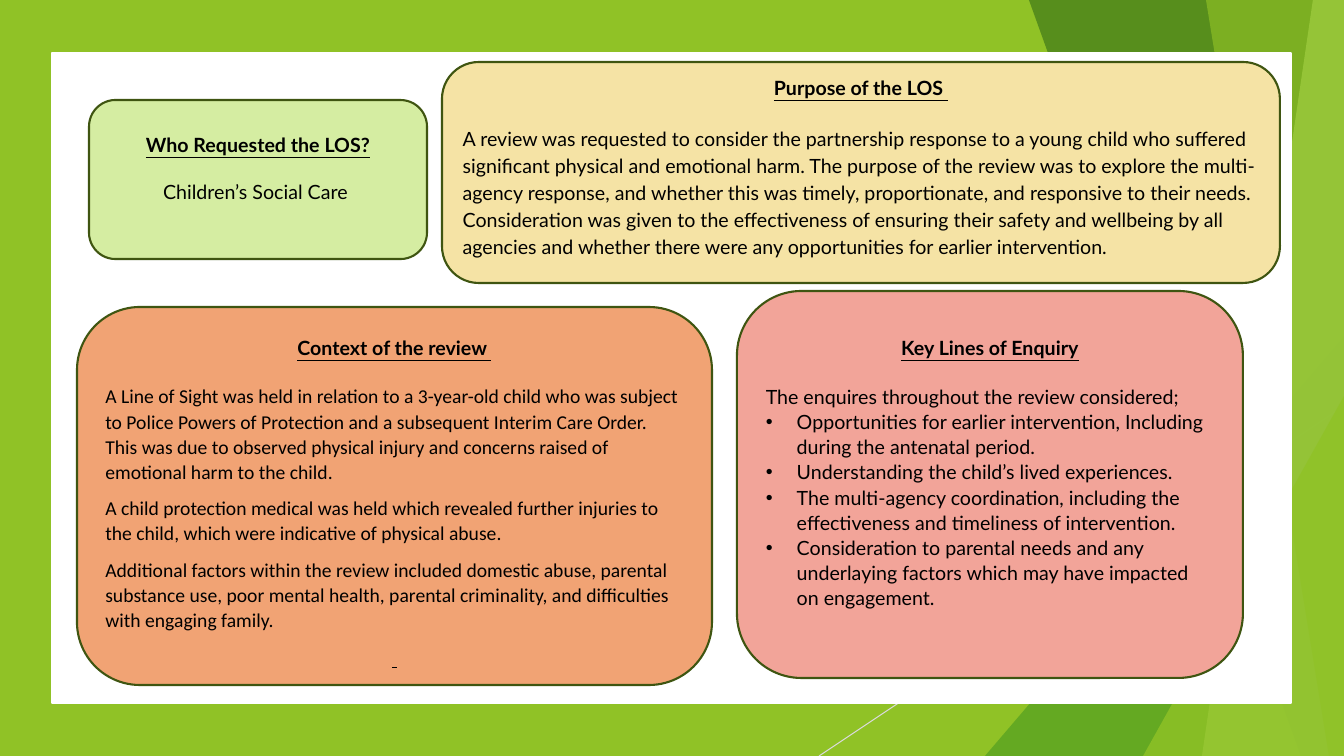
from dataclasses import dataclass

from lxml import etree
from pptx import Presentation
from pptx.dml.color import RGBColor
from pptx.enum.shapes import MSO_CONNECTOR, MSO_SHAPE
from pptx.enum.text import MSO_ANCHOR, PP_ALIGN
from pptx.oxml.ns import qn
from pptx.util import Emu, Pt

RECT, ROUND, TRIANGLE = MSO_SHAPE.RECTANGLE, MSO_SHAPE.ROUNDED_RECTANGLE, MSO_SHAPE.ISOSCELES_TRIANGLE
STRAIGHT = MSO_CONNECTOR.STRAIGHT
LEFT, CENTER = PP_ALIGN.LEFT, PP_ALIGN.CENTER
TOP = MSO_ANCHOR.TOP

WIDTH, HEIGHT = 1344, 756
SCALE = 12192000 / WIDTH  # EMU per px

LIME = RGBColor(0x90, 0xC2, 0x26)
GREEN = RGBColor(0x54, 0xA0, 0x21)
DARK_GREEN = RGBColor(0x3F, 0x78, 0x19)
PALE_LIME = RGBColor(0xC0, 0xE4, 0x74)
OLIVE = RGBColor(0x3F, 0x55, 0x11)
GREY = RGBColor(0xD9, 0xD9, 0xD9)
WHITE = RGBColor(0xFF, 0xFF, 0xFF)
BLACK = RGBColor(0, 0, 0)
MINT = RGBColor(0xD5, 0xED, 0xA2)
SAND = RGBColor(0xF5, 0xE3, 0xA5)
ORANGE = RGBColor(0xF1, 0xA3, 0x74)
PINK = RGBColor(0xF2, 0xA4, 0x99)


@dataclass
class Facet:
    """Band from a slanted left edge to the right side of the slide."""
    top_x: int
    bottom_x: int
    color: RGBColor
    alpha: int


@dataclass
class Wedge:
    """Right triangle in the bottom right corner of the slide."""
    left: int
    top: int
    color: RGBColor
    alpha: int


@dataclass
class Card:
    box: tuple[int, int, int, int]
    color: RGBColor
    inset_top: int
    title: str
    body: list[str]
    bullets: tuple[str, ...] = ()
    font: str = "Lato"
    align: PP_ALIGN = LEFT
    spacing: float = 1.07
    after: int = 0
    closing: str = ""


DECOR = [
    Facet(1238, 1012, LIME, 30),
    Facet(1058, 1192, LIME, 20),
    Wedge(985, 336, GREEN, 72),
    Facet(1029, 1301, DARK_GREEN, 70),
    Facet(1313, 1202, PALE_LIME, 70),
    Facet(1206, 1329, LIME, 65),
    Wedge(1143, 396, LIME, 80),
]

CARDS = [
    Card((89, 100, 338, 159), MINT, 25, "Who Requested the LOS?",
         ["Children’s Social Care "], align=CENTER, spacing=1.0),
    Card((442, 62, 838, 221), SAND, 3, "Purpose of the LOS ",
         ["A review was requested to consider the partnership response to a young child who "
          "suffered significant physical and emotional harm. The purpose of the review was to "
          "explore the multi-agency response, and whether this was timely, proportionate, and "
          "responsive to their needs. Consideration was given to the effectiveness of ensuring "
          "their safety and wellbeing by all agencies and whether there were any opportunities "
          "for earlier intervention."], spacing=1.15),
    Card((77, 307, 635, 378), ORANGE, 10, "Context of the review ",
         ["A Line of Sight was held in relation to a 3-year-old child who was subject to Police "
          "Powers of Protection and a subsequent Interim Care Order. This was due to observed "
          "physical injury and concerns raised of emotional harm to the child.",
          "A child protection medical was held which revealed further injuries to the child, "
          "which were indicative of physical abuse.",
          "Additional factors within the review included domestic abuse, parental substance use, "
          "poor mental health, parental criminality, and difficulties with engaging family."],
         font="Calibri", after=8, closing=" "),
    Card((737, 291, 506, 387), PINK, 26, "Key Lines of Enquiry",
         ["The enquires throughout the review considered;"],
         bullets=(
             "Opportunities for earlier intervention, Including during the antenatal period.",
             "Understanding the child’s lived experiences.",
             "The multi-agency coordination, including the effectiveness and timeliness of "
             "intervention.",
             "Consideration to parental needs and any underlaying factors which may have "
             "impacted on engagement.")),
]


def px(n: int) -> Emu:
    return Emu(round(n * SCALE))


def style(s, color: RGBColor, alpha: int = 100, line: RGBColor | None = None,
          weight: float = 1.5) -> None:
    s.shadow.inherit = False
    s.fill.solid()
    s.fill.fore_color.rgb = color
    if alpha < 100:
        clr = s._element.spPr.find(qn("a:solidFill"))[0]
        etree.SubElement(clr, qn("a:alpha"), val=str(alpha * 1000))
    if line is None:
        s.line.fill.background()
    else:
        s.line.color.rgb = line
        s.line.width = Pt(weight)


def add_box(shapes, kind, box: tuple[int, int, int, int], color: RGBColor, **fmt):
    s = shapes.add_shape(kind, *map(px, box))
    style(s, color, **fmt)
    return s


def add_decor(shapes, part: Facet | Wedge) -> None:
    if isinstance(part, Wedge):
        box = (part.left, part.top, WIDTH - part.left, HEIGHT - part.top)
        s = add_box(shapes, TRIANGLE, box, part.color, alpha=part.alpha)
        s.adjustments[0] = 1
    else:
        outline = shapes.build_freeform(part.top_x, 0, scale=SCALE)
        outline.add_line_segments([(WIDTH, 0), (WIDTH, HEIGHT), (part.bottom_x, HEIGHT)])
        style(outline.convert_to_shape(), part.color, alpha=part.alpha)


def add_text(tf, text: str, *, font: str = "Lato", heading: bool = False, align=LEFT,
             spacing: float = 1.0, before: int = 0, after: int = 0,
             bullet: bool = False) -> None:
    p = tf.paragraphs[0] if not tf.text else tf.add_paragraph()
    p.alignment = align
    p.line_spacing = spacing
    p.space_before, p.space_after = Pt(before), Pt(after)
    if bullet:
        pPr = p._p.get_or_add_pPr()
        pPr.set("marL", str(px(31)))
        pPr.set("indent", str(-px(31)))
        etree.SubElement(pPr, qn("a:buFont"), typeface="Arial")
        etree.SubElement(pPr, qn("a:buChar"), char="•")
    r = p.add_run()
    r.text = text
    r.font.name, r.font.size = font, Pt(14)
    r.font.bold = r.font.underline = heading
    r.font.color.rgb = BLACK


def add_card(shapes, card: Card) -> None:
    s = add_box(shapes, ROUND, card.box, card.color, line=OLIVE)
    tf = s.text_frame
    tf.word_wrap = True
    tf.vertical_anchor = TOP
    tf.margin_top = px(card.inset_top)
    add_text(tf, card.title, heading=True, align=CENTER)
    for i, text in enumerate(card.body):
        add_text(tf, text, font=card.font, align=card.align, spacing=card.spacing,
                 before=0 if i else 17, after=card.after)
    for text in card.bullets:
        add_text(tf, text, font=card.font, spacing=card.spacing, bullet=True)
    if card.closing:
        add_text(tf, card.closing, heading=True, align=CENTER)


def main() -> None:
    prs = Presentation()
    prs.slide_width, prs.slide_height = px(WIDTH), px(HEIGHT)
    shapes = prs.slides.add_slide(prs.slide_layouts[6]).shapes

    # Green backdrop with slanted facets
    add_box(shapes, RECT, (0, 0, WIDTH, HEIGHT), LIME)
    ray = shapes.add_connector(STRAIGHT, px(WIDTH), px(406), px(819), px(HEIGHT))
    ray.line.color.rgb = GREY
    ray.line.width = Pt(0.75)
    etree.SubElement(ray._element.spPr, qn("a:effectLst"))
    for part in DECOR:
        add_decor(shapes, part)

    # White panel and its four cards
    add_box(shapes, RECT, (52, 53, 1239, 650), WHITE, line=WHITE, weight=1.75)
    for card in CARDS:
        add_card(shapes, card)

    prs.save("out.pptx")


if __name__ == "__main__":
    main()
